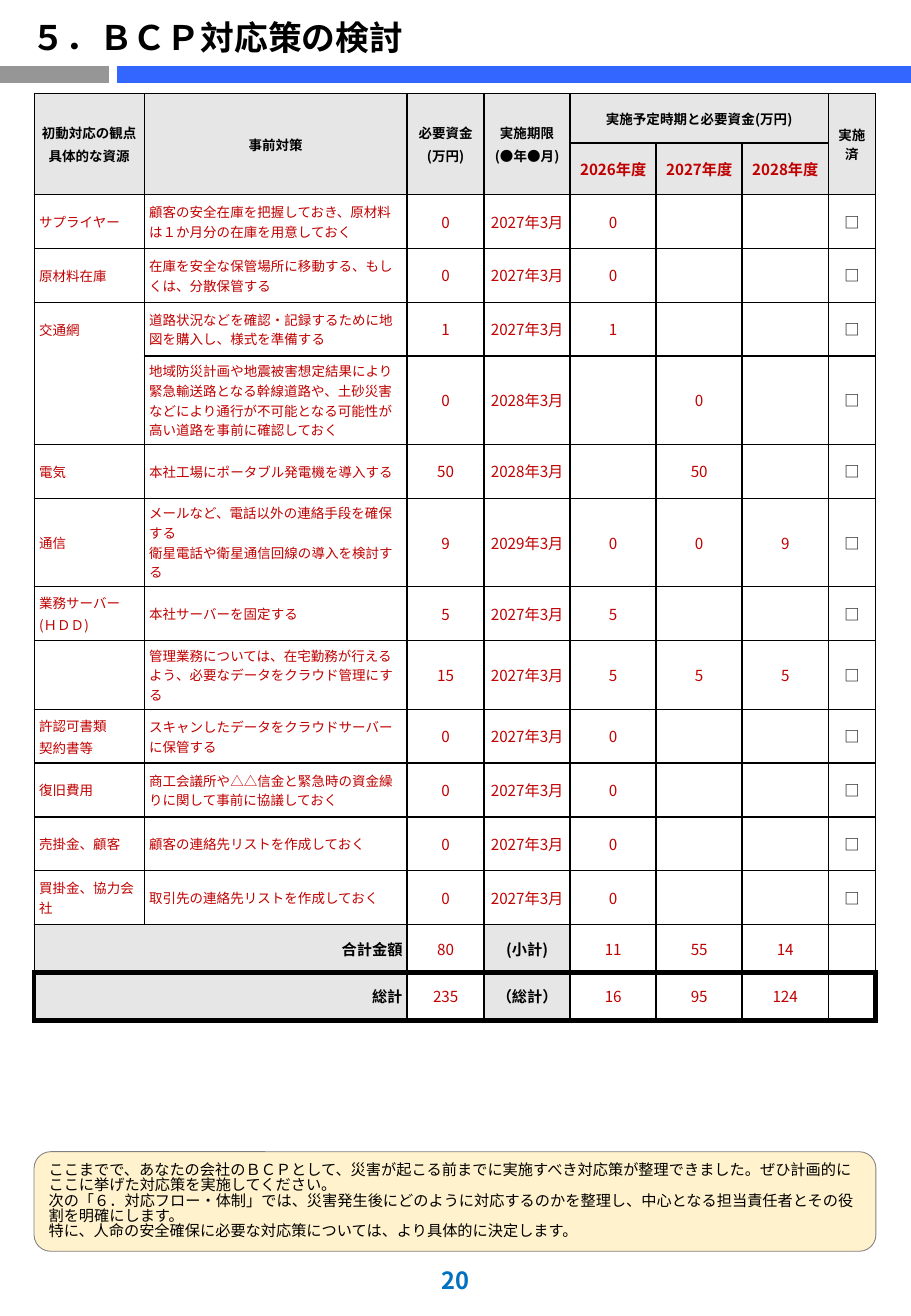
"""Build the BCP countermeasure planning sheet."""
from lxml import etree
from pptx import Presentation
from pptx import util as u
from pptx.dml.color import RGBColor
from pptx.enum import shapes, text
from pptx.oxml import ns

BLACK = RGBColor(0, 0, 0)
WHITE = RGBColor(255, 255, 255)
RED = RGBColor(0xC0, 0, 0)
HEADER_GRAY = RGBColor(0xE7, 0xE6, 0xE6)
BAR_GRAY = RGBColor(0x96, 0x96, 0x96)
BAR_BLUE = RGBColor(0x33, 0x66, 0xFF)
PAGE_BLUE = RGBColor(0, 0x70, 0xC0)
NOTE_FILL = RGBColor(0xFF, 0xF2, 0xCC)
NOTE_LINE = RGBColor(0x80, 0x80, 0x80)
LEFT, CENTER, RIGHT = text.PP_ALIGN.LEFT, text.PP_ALIGN.CENTER, text.PP_ALIGN.RIGHT
MIDDLE, BOTTOM = text.MSO_ANCHOR.MIDDLE, text.MSO_ANCHOR.BOTTOM

COLUMNS = [65.2, 155.9, 45.6, 51, 51, 51, 51, 28.1]
HEADINGS = [
    ["初動対応の観点\n具体的な資源", "事前対策", "必要資金\n(万円)", "実施期限\n(●年●月)",
     "実施予定時期と必要資金(万円)", "", "", "実施済"],
    ["", "", "", "", "2026年度", "2027年度", "2028年度", ""],
]
MEASURES = [
    ["サプライヤー", "顧客の安全在庫を把握しておき、原材料は１か月分の在庫を用意しておく",
     "0", "2027年3月", "0", "", ""],
    ["原材料在庫", "在庫を安全な保管場所に移動する、もしくは、分散保管する",
     "0", "2027年3月", "0", "", ""],
    ["交通網", "道路状況などを確認・記録するために地図を購入し、様式を準備する",
     "1", "2027年3月", "1", "", ""],
    ["", "地域防災計画や地震被害想定結果により緊急輸送路となる幹線道路や、土砂災害などにより"
     "通行が不可能となる可能性が高い道路を事前に確認しておく",
     "0", "2028年3月", "", "0", ""],
    ["電気", "本社工場にポータブル発電機を導入する", "50", "2028年3月", "", "50", ""],
    ["通信", "メールなど、電話以外の連絡手段を確保する\n衛星電話や衛星通信回線の導入を検討する",
     "9", "2029年3月", "0", "0", "9"],
    ["業務サーバー\n(ＨＤＤ)", "本社サーバーを固定する", "5", "2027年3月", "5", "", ""],
    ["", "管理業務については、在宅勤務が行えるよう、必要なデータをクラウド管理にする",
     "15", "2027年3月", "5", "5", "5"],
    ["許認可書類\n契約書等", "スキャンしたデータをクラウドサーバーに保管する",
     "0", "2027年3月", "0", "", ""],
    ["復旧費用", "商工会議所や△△信金と緊急時の資金繰りに関して事前に協議しておく",
     "0", "2027年3月", "0", "", ""],
    ["売掛金、顧客", "顧客の連絡先リストを作成しておく", "0", "2027年3月", "0", "", ""],
    ["買掛金、協力会社", "取引先の連絡先リストを作成しておく", "0", "2027年3月", "0", "", ""],
]
TOTALS = [
    ["合計金額", "", "80", "(小計)", "11", "55", "14", ""],
    ["総計", "", "235", "（総計）", "16", "95", "124", ""],
]
HEIGHTS = [29.3, 30.5] + [31.8] * 3 + [52, 31.8, 52, 31.8, 40.8] + [31.8] * 4 + [28.4] * 2
MERGES = [(0, col, 1, col) for col in (0, 1, 2, 3, 7)] + [
    (0, 4, 0, 6), (14, 0, 14, 1), (15, 0, 15, 1)]
TRAFFIC_ROW, GRAND_ROW = 4, 15
ADVICE = (
    "ここまでで、あなたの会社のＢＣＰとして、災害が起こる前までに実施すべき対応策が整理できました。"
    "ぜひ計画的にここに挙げた対応策を実施してください。\n"
    "次の「６．対応フロー・体制」では、災害発生後にどのように対応するのかを整理し、"
    "中心となる担当責任者とその役割を明確にします。\n"
    "特に、人命の安全確保に必要な対応策については、より具体的に決定します。")


class Sheet:
    def __init__(self, slide, font):
        self.slide = slide
        self.font = font

    def set_words(self, frame, words, size, color=BLACK, bold=False, align=LEFT,
                  gap=0, spacing=None):
        frame.text = words
        frame.word_wrap = True
        for index, paragraph in enumerate(frame.paragraphs):
            paragraph.alignment = align
            paragraph.space_before = u.Pt(gap if index else 0)
            if spacing:
                paragraph.line_spacing = spacing
            style = paragraph.font
            style.size, style.bold, style.name = u.Pt(size), bold, self.font
            style.color.rgb = color
            properties = paragraph._p.pPr.find(ns.qn("a:defRPr"))
            etree.SubElement(properties, ns.qn("a:ea"), typeface=self.font)

    def bar(self, start, end, y, color):
        line = self.slide.shapes.add_connector(
            shapes.MSO_CONNECTOR.STRAIGHT, u.Pt(start), u.Pt(y), u.Pt(end), u.Pt(y))
        line.line.color.rgb = color
        line.line.width = u.Pt(10)
        etree.SubElement(line._element.spPr, ns.qn("a:effectLst"))

    def title(self, words, left, top, width, height):
        heading = self.slide.shapes.title
        heading.left, heading.top = u.Pt(left), u.Pt(top)
        heading.width, heading.height = u.Pt(width), u.Pt(height)
        frame = heading.text_frame
        self.set_words(frame, words, 20, bold=True)
        frame.auto_size = text.MSO_AUTO_SIZE.NONE
        frame.vertical_anchor = BOTTOM
        frame.margin_bottom = u.Pt(1.8)

    def page_number(self, words, left, top, width, height):
        footer = self.slide.shapes.add_textbox(
            u.Pt(left), u.Pt(top), u.Pt(width), u.Pt(height))
        self.set_words(footer.text_frame, words, 14, PAGE_BLUE, True, CENTER)
        footer.text_frame.vertical_anchor = BOTTOM

    def note(self, words, left, top, width, height):
        panel = self.slide.shapes.add_shape(
            shapes.MSO_SHAPE.ROUNDED_RECTANGLE,
            u.Pt(left), u.Pt(top), u.Pt(width), u.Pt(height))
        panel.shadow.inherit = False
        panel.fill.solid()
        panel.fill.fore_color.rgb = NOTE_FILL
        panel.line.color.rgb = NOTE_LINE
        panel.line.width = u.Pt(0.5)
        frame = panel.text_frame
        self.set_words(frame, words, 9, spacing=0.83)
        frame.vertical_anchor = MIDDLE
        frame.margin_left = frame.margin_right = u.Pt(5.76)
        frame.margin_top = frame.margin_bottom = u.Pt(2.88)

    def borders(self, cell, widths):
        properties = cell._tc.get_or_add_tcPr()
        for index, (side, width) in enumerate(zip("LRTB", widths)):
            edge = etree.Element(ns.qn(f"a:ln{side}"), w=str(u.Pt(width)))
            if width:
                fill = etree.SubElement(edge, ns.qn("a:solidFill"))
                etree.SubElement(fill, ns.qn("a:srgbClr"), val=str(BLACK))
            else:
                etree.SubElement(edge, ns.qn("a:noFill"))
            properties.insert(index, edge)

    def cell(self, cell, words, row, col):
        header, total = row < len(HEADINGS), row >= GRAND_ROW - 1
        label = header or (total and col in (0, 1, 3))
        red = (row == 1) if header else not label and col != 7
        small = row == 0 or (not header and not total and col < 2)
        if header or col > 1:
            align = CENTER
        else:
            align = RIGHT if total else LEFT
        gap = 1.6 if header or col != 1 else 0
        self.set_words(cell.text_frame, words, 8 if small else 9,
                       RED if red else BLACK, label, align, gap)
        cell.vertical_anchor = MIDDLE
        cell.margin_left = cell.margin_right = u.Pt(2.88)
        cell.margin_top = cell.margin_bottom = u.Pt(2.88)
        cell.fill.solid()
        cell.fill.fore_color.rgb = HEADER_GRAY if label else WHITE
        grand = row == GRAND_ROW
        top, bottom = 3 if grand else 1, 3 if total else 1
        if col == 0 and row == TRAFFIC_ROW:
            bottom = 0
        if col == 0 and row == TRAFFIC_ROW + 1:
            top = 0
        self.borders(cell, (3 if grand and col == 0 else 1,
                            3 if grand and col == 7 else 1, top, bottom))

    def plan(self, rows, left, top):
        table = self.slide.shapes.add_table(
            len(rows), len(COLUMNS), u.Pt(left), u.Pt(top),
            u.Pt(sum(COLUMNS)), u.Pt(sum(HEIGHTS))).table
        table.first_row = table.horz_banding = False
        for column, width in zip(table.columns, COLUMNS):
            column.width = u.Pt(width)
        for row, (entries, height) in enumerate(zip(rows, HEIGHTS)):
            table.rows[row].height = u.Pt(height)
            for col, words in enumerate(entries):
                self.cell(table.cell(row, col), words, row, col)
        for row, col, last_row, last_col in MERGES:
            table.cell(row, col).merge(table.cell(last_row, last_col))
        table.cell(0, 7)._tc.get_or_add_tcPr().set("vert", "eaVert")


def main():
    deck = Presentation()
    deck.slide_width, deck.slide_height = u.Pt(540), u.Pt(779.76)
    sheet = Sheet(deck.slides.add_slide(deck.slide_layouts[5]), "Noto Sans CJK JP")
    sheet.bar(0, 64.8, 44, BAR_GRAY)
    sheet.bar(69.1, 540, 44, BAR_BLUE)
    sheet.title("５．ＢＣＰ対応策の検討", 11.5, 2.9, 516, 33.1)
    sheet.plan(HEADINGS + [row + ["□"] for row in MEASURES] + TOTALS, 20.3, 55.4)
    sheet.page_number("20", 0, 741.6, 540, 28.8)
    sheet.note(ADVICE, 20.2, 682.4, 499, 59)
    deck.save("out.pptx")


if __name__ == "__main__":
    main()
